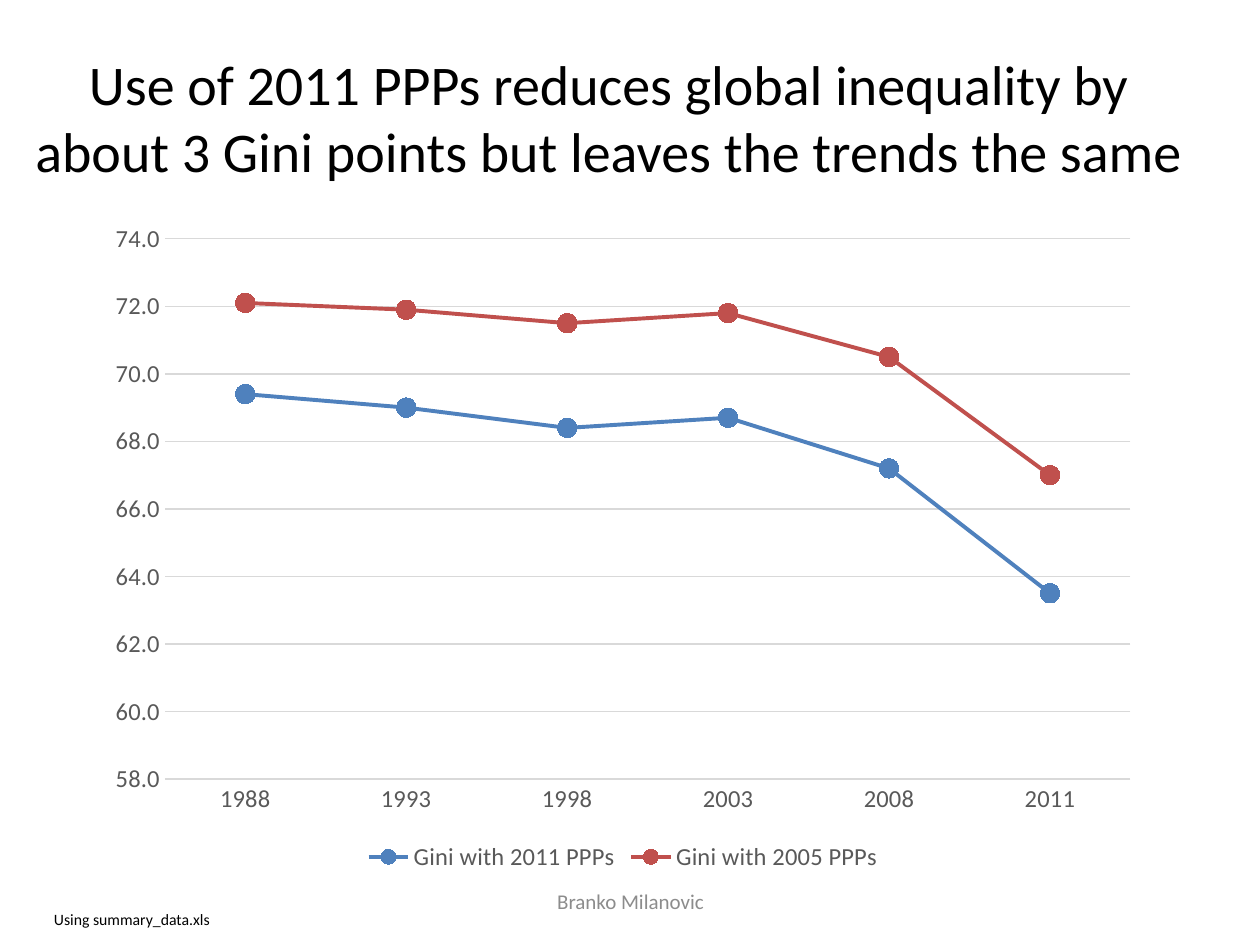
from pptx import Presentation
from pptx.chart.data import CategoryChartData
from pptx.dml.color import RGBColor
from pptx.enum.chart import (XL_CHART_TYPE, XL_LEGEND_POSITION,
                             XL_MARKER_STYLE, XL_TICK_MARK)
from pptx.enum.text import MSO_ANCHOR, MSO_AUTO_SIZE, PP_ALIGN
from pptx.util import Inches, Pt

LINE_MARKERS = XL_CHART_TYPE.LINE_MARKERS
BOTTOM = XL_LEGEND_POSITION.BOTTOM
CIRCLE = XL_MARKER_STYLE.CIRCLE
NO_TICK = XL_TICK_MARK.NONE
TOP, MIDDLE = MSO_ANCHOR.TOP, MSO_ANCHOR.MIDDLE
LEFT, CENTER = PP_ALIGN.LEFT, PP_ALIGN.CENTER
NO_FIT = MSO_AUTO_SIZE.NONE

BLACK = RGBColor(0x00, 0x00, 0x00)
FOOTER_GRAY = RGBColor(0x8C, 0x8C, 0x8C)
LABEL_GRAY = RGBColor(0x59, 0x59, 0x59)
GRID_GRAY = RGBColor(0xD9, 0xD9, 0xD9)
BLUE = RGBColor(0x4F, 0x81, 0xBD)
RED = RGBColor(0xC0, 0x50, 0x4D)

FONT = "Calibri"
YEARS = ["1988", "1993", "1998", "2003", "2008", "2011"]
GINI_SERIES = [
    ("Gini with 2011 PPPs", [69.4, 69.0, 68.4, 68.7, 67.2, 63.5], BLUE),
    ("Gini with 2005 PPPs", [72.1, 71.9, 71.5, 71.8, 70.5, 67.0], RED),
]


def set_values(target, values):
    for name, value in values.items():
        setattr(target, name, value)


def format_font(font, size, color):
    set_values(font, {"name": FONT, "size": Pt(size), "bold": False})
    font.color.rgb = color


def format_line(line, color, width):
    line.color.rgb = color
    line.width = Pt(width)


def fill_text(shape, text, size, color, align, anchor):
    frame = shape.text_frame
    set_values(frame, {"word_wrap": True, "auto_size": NO_FIT,
                       "vertical_anchor": anchor})
    para = frame.paragraphs[0]
    para.alignment = align
    span = para.add_run()
    span.text = text
    format_font(span.font, size, color)


def place_title(page, box):
    title = page.shapes.title
    set_values(title, dict(zip(("left", "top", "width", "height"), box)))
    fill_text(title, "Use of 2011 PPPs reduces global inequality by about "
              "3 Gini points but leaves the trends the same",
              32, BLACK, CENTER, MIDDLE)


def place_note(page, box, text, size, color, align, anchor):
    fill_text(page.shapes.add_textbox(*box), text, size, color, align, anchor)


def format_axes(chart):
    years, gini = chart.category_axis, chart.value_axis
    for axis in (years, gini):
        set_values(axis, {"major_tick_mark": NO_TICK,
                          "minor_tick_mark": NO_TICK})
        format_font(axis.tick_labels.font, 14, LABEL_GRAY)
    format_line(years.format.line, GRID_GRAY, 0.75)

    set_values(gini, {"minimum_scale": 58, "maximum_scale": 74,
                      "major_unit": 2, "has_major_gridlines": True})
    set_values(gini.tick_labels, {"number_format": "0.0",
                                  "number_format_is_linked": False})
    gini.format.line.fill.background()
    format_line(gini.major_gridlines.format.line, GRID_GRAY, 0.75)


def place_chart(page, box):
    data = CategoryChartData(number_format="0.0")
    data.categories = YEARS
    for name, values, _ in GINI_SERIES:
        data.add_series(name, values)
    chart = page.shapes.add_chart(LINE_MARKERS, *box, data).chart
    set_values(chart, {"has_title": False, "has_legend": True})
    format_font(chart.font, 10, BLACK)
    format_axes(chart)

    # Legend
    set_values(chart.legend, {"position": BOTTOM, "include_in_layout": False})
    format_font(chart.legend.font, 14, LABEL_GRAY)

    # Lines and markers
    plot = chart.plots[0]
    plot.vary_by_categories = False
    for series, (_, _, color) in zip(plot.series, GINI_SERIES):
        series.smooth = False
        format_line(series.format.line, color, 2.25)
        marker = series.marker
        set_values(marker, {"style": CIRCLE, "size": 11})
        marker.format.fill.solid()
        marker.format.fill.fore_color.rgb = color
        format_line(marker.format.line, color, 0.75)


def main():
    deck = Presentation()
    set_values(deck, {"slide_width": Inches(10), "slide_height": Inches(7.5)})
    page = deck.slides.add_slide(deck.slide_layouts.get_by_name("Title Only"))

    def box(*lengths):
        return [Inches(length) for length in lengths]

    place_title(page, box(0.17, 0.3, 9.33, 1.25))
    place_note(page, box(3.42, 6.95, 3.17, 0.4), "Branko Milanovic",
               12, FOOTER_GRAY, CENTER, MIDDLE)
    place_chart(page, box(0.75, 1.67, 8.39, 5.29))
    place_note(page, box(0.33, 7.17, 3, 0.25), "Using summary_data.xls",
               9, BLACK, LEFT, TOP)
    deck.save("out.pptx")


if __name__ == "__main__":
    main()
